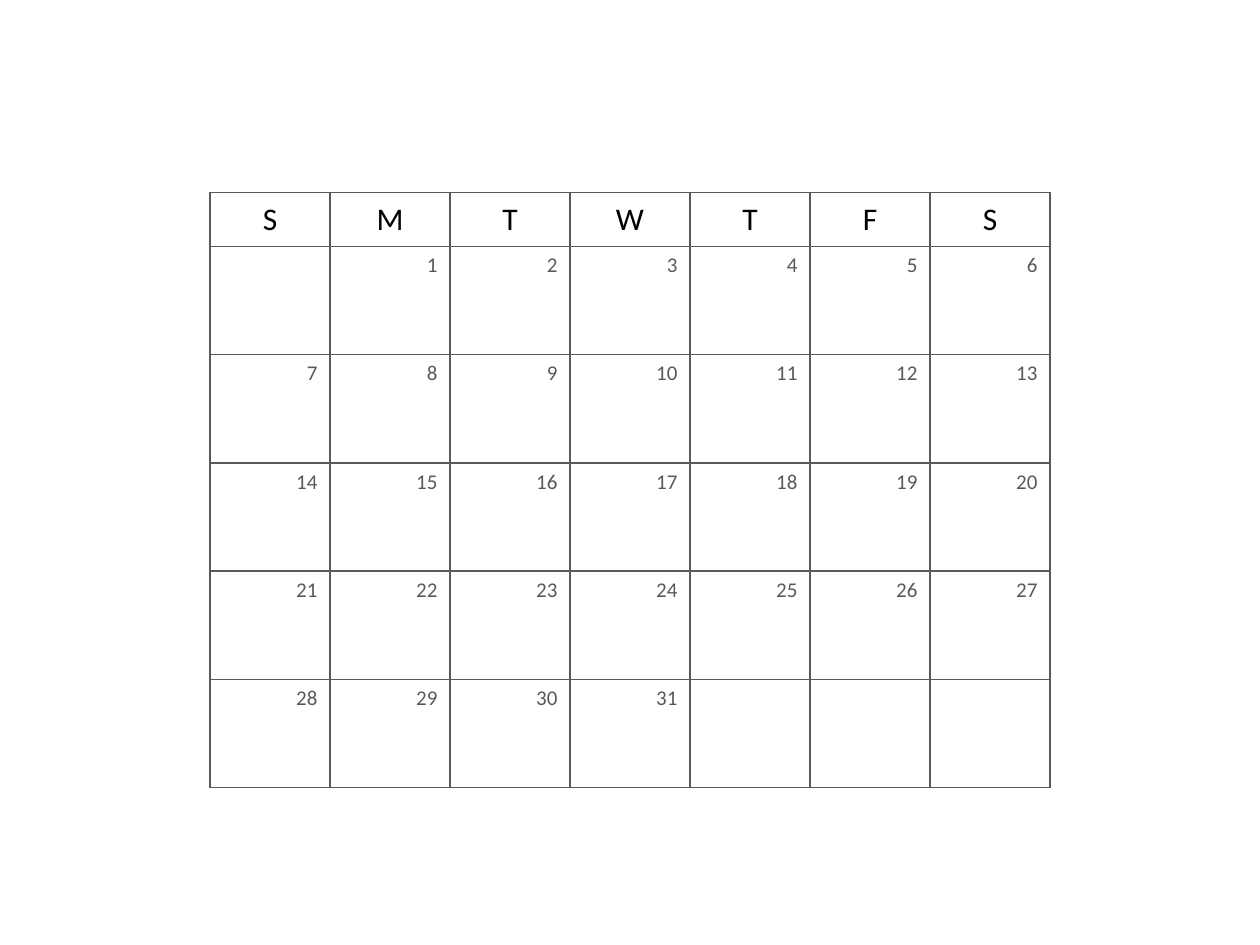
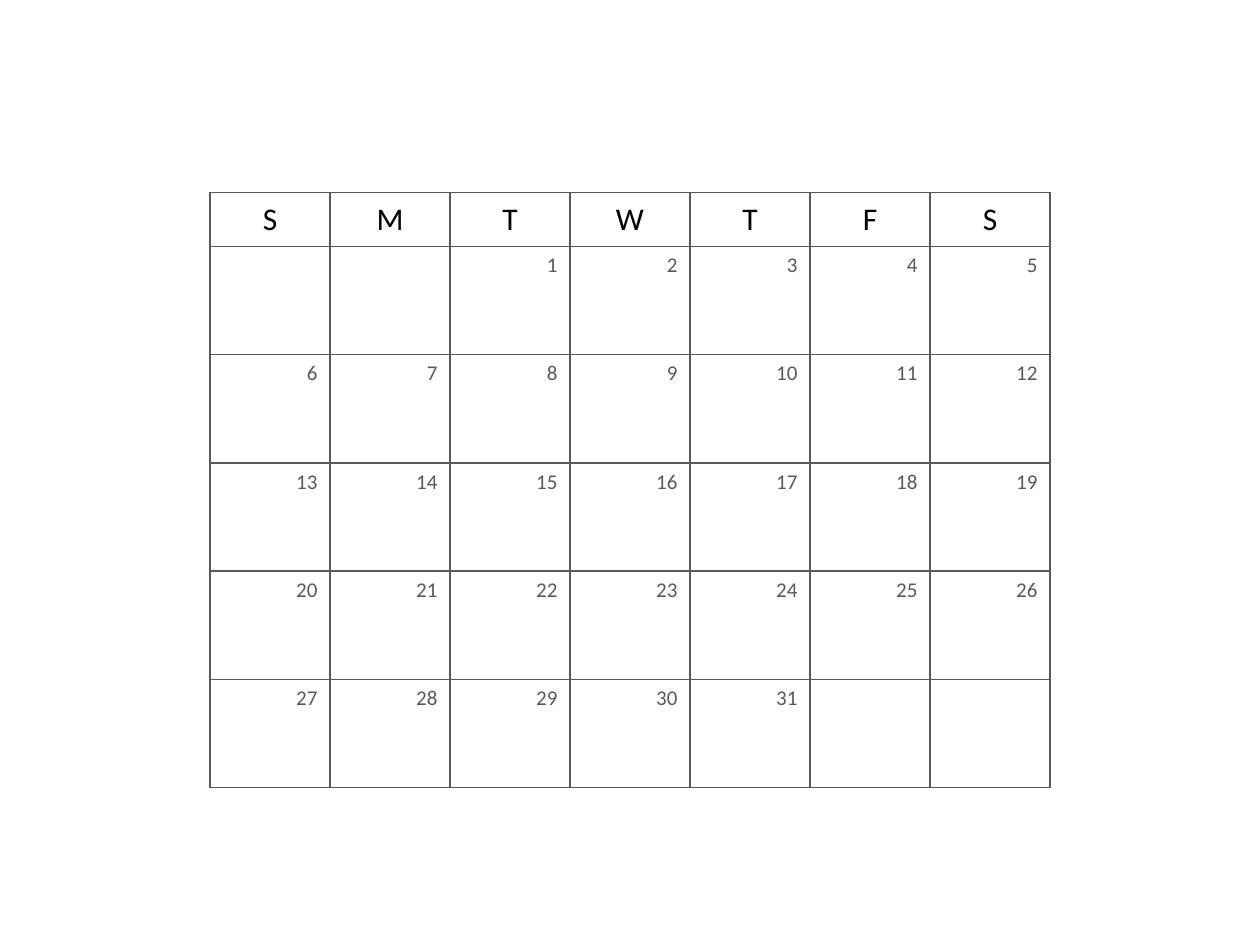
from dataclasses import dataclass

from lxml import etree
from pptx import Presentation, util as u
from pptx.dml.color import RGBColor
from pptx.enum import text
from pptx.oxml import ns


@dataclass
class Theme:
    font: str = "Calibri"
    paper: str = "FFFFFF"
    head: str = "000000"
    ink: str = "595959"
    head_size: int = 18
    day_size: int = 12
    line_width: int = 1


th = Theme()
WEEKDAYS = "SMTWTFS"
WEEKS = 5
DAYS = 31
FIRST_COLUMNS = [1, 2]

HEAD = dict(size=u.Pt(th.head_size), color=th.head,
            align=text.PP_ALIGN.CENTER, anchor=text.MSO_ANCHOR.MIDDLE)
DAY = dict(size=u.Pt(th.day_size), color=th.ink,
           align=text.PP_ALIGN.RIGHT, anchor=text.MSO_ANCHOR.TOP)


def add_borders(cell):
    tc_pr = cell._tc.get_or_add_tcPr()
    for i, side in enumerate(("lnL", "lnR", "lnT", "lnB")):
        ln = etree.Element(ns.qn(f"a:{side}"), w=str(u.Pt(th.line_width)))
        fill = etree.SubElement(ln, ns.qn("a:solidFill"))
        etree.SubElement(fill, ns.qn("a:srgbClr"), val=th.ink)
        tc_pr.insert(i, ln)


def write_cell(cell, label, style):
    cell.fill.solid()
    cell.fill.fore_color.rgb = RGBColor.from_string(th.paper)
    add_borders(cell)
    cell.vertical_anchor = style["anchor"]
    p = cell.text_frame.paragraphs[0]
    p.alignment = style["align"]
    font = p.font
    if label:
        r = p.add_run()
        r.text = label
        font = r.font
    for name, value in dict(name=th.font, size=style["size"], bold=False).items():
        setattr(font, name, value)
    font.color.rgb = RGBColor.from_string(style["color"])


prs = Presentation()
prs.slide_width, prs.slide_height = u.Inches(10), u.Inches(7.5)
W, H = prs.slide_width, prs.slide_height

left, top = W // 6, int(H * 0.2035)
width, height = W * 2 // 3, int(H * 0.63)
col_w = width // len(WEEKDAYS)
week_h = int(height / (WEEKS + 0.5))

for first in FIRST_COLUMNS:
    s = prs.slides.add_slide(prs.slide_layouts[6])
    table = s.shapes.add_table(WEEKS + 1, len(WEEKDAYS), left, top, width, height).table
    for name in ("first_row", "horz_banding"):
        setattr(table, name, False)
    for col in table.columns:
        col.width = col_w
    for i, row in enumerate(table.rows):
        row.height = week_h if i else week_h // 2

    for c, weekday in enumerate(WEEKDAYS):
        write_cell(table.cell(0, c), weekday, HEAD)
        for week in range(WEEKS):
            day = week * len(WEEKDAYS) + c - first + 1
            label = str(day) if 1 <= day <= DAYS else ""
            write_cell(table.cell(week + 1, c), label, DAY)

prs.save("out.pptx")
